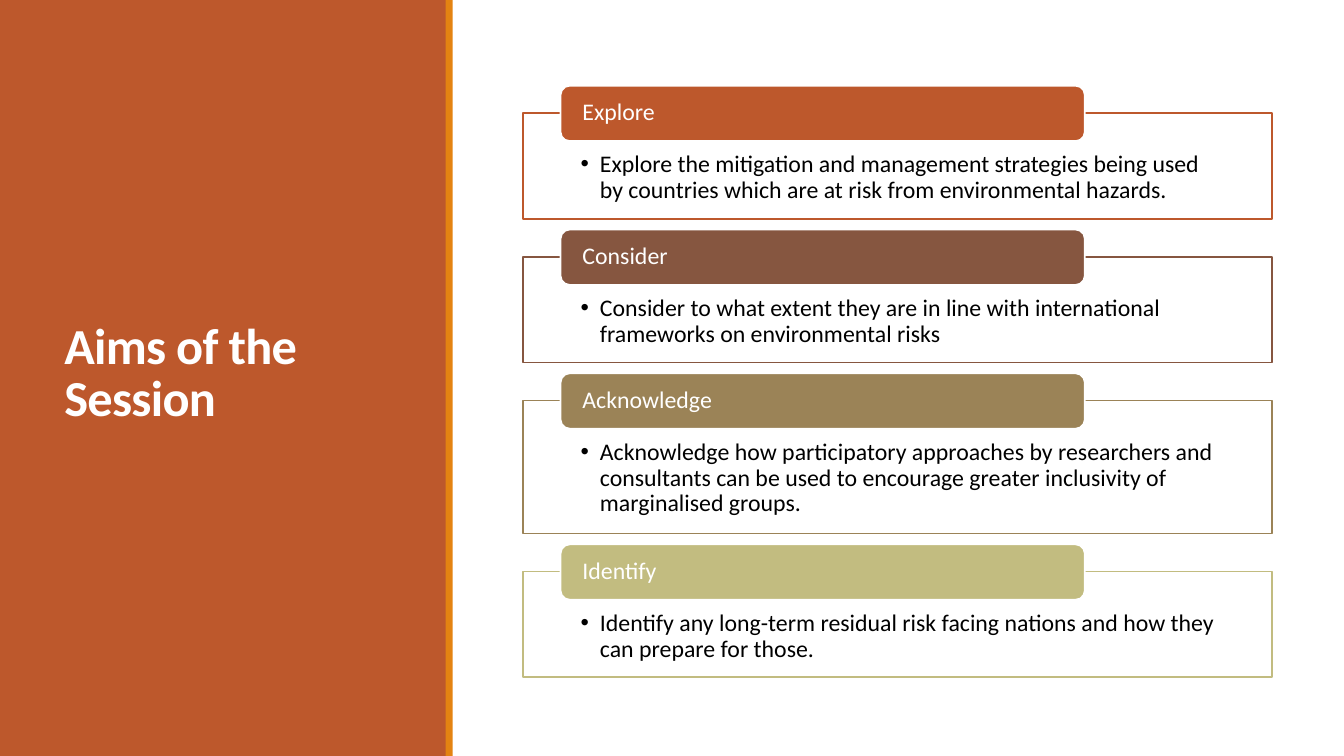
from dataclasses import dataclass

from lxml import etree
from pptx import Presentation
from pptx import util as u
from pptx.dml.color import RGBColor
from pptx.enum import shapes, text
from pptx.oxml import ns

WHITE = RGBColor(0xFF, 0xFF, 0xFF)
BLACK = RGBColor(0x00, 0x00, 0x00)
RUST = RGBColor(0xBD, 0x58, 0x2C)
ORANGE = RGBColor(0xE4, 0x83, 0x12)
BROWN = RGBColor(0x86, 0x56, 0x40)
KHAKI = RGBColor(0x9B, 0x83, 0x57)
SAGE = RGBColor(0xC2, 0xBC, 0x80)

SLIDE_WIDTH, SLIDE_HEIGHT = 13.33, 7.5
FIRST_TOP, LAST_TOP = 1.12, 5.67
TAB_RISE = 0.27
TAB_HEIGHT = 0.55
HANGING = 0.19


@dataclass
class Aim:
    heading: str
    detail: str
    color: RGBColor
    height: float = 1.05


AIMS = [
    Aim("Explore", "Explore the mitigation and management strategies being used by "
        "countries which are at risk from environmental hazards.", RUST),
    Aim("Consider", "Consider to what extent they are in line with international "
        "frameworks on environmental risks", BROWN),
    Aim("Acknowledge", "Acknowledge how participatory approaches by researchers and "
        "consultants can be used to encourage greater inclusivity of "
        "marginalised groups.", KHAKI, 1.32),
    Aim("Identify", "Identify any long-term residual risk facing nations and how "
        "they can prepare for those.", SAGE),
]


def add_block(page, kind, left: float, top: float, width: float, height: float,
              fill: RGBColor, line: RGBColor | None = None):
    """Add a flat shape, outlined only when a line colour is given."""
    block = page.shapes.add_shape(kind, *map(u.Inches, (left, top, width, height)))
    block.shadow.inherit = False
    block.fill.solid()
    block.fill.fore_color.rgb = fill
    if line is None:
        block.line.fill.background()
    else:
        block.line.color.rgb = line
        block.line.width = u.Pt(1.25)
    return block


def write(box, words: str, color: RGBColor, margins: tuple, anchor,
          size: float = 17, bold: bool = False, spacing: float = 0.9):
    """Fill a box with one left-aligned paragraph; return it with its run."""
    frame = box.text_frame
    left, top, right, bottom = map(u.Inches, margins)
    frame_format = {"word_wrap": True, "vertical_anchor": anchor,
                    "margin_left": left, "margin_top": top,
                    "margin_right": right, "margin_bottom": bottom}
    para = frame.paragraphs[0]
    span = para.add_run()
    span.text = words
    para_format = {"alignment": text.PP_ALIGN.LEFT, "line_spacing": spacing}
    font_format = {"name": "Calibri", "size": u.Pt(size), "bold": bold}
    for target, values in ((frame, frame_format), (para, para_format),
                           (span.font, font_format)):
        for name, value in values.items():
            setattr(target, name, value)
    span.font.color.rgb = color
    return para, span


def add_bullet(para) -> None:
    properties = para._p.get_or_add_pPr()
    properties.set("marL", str(u.Inches(HANGING)))
    properties.set("indent", str(-u.Inches(HANGING)))
    etree.SubElement(properties, ns.qn("a:buFont")).set("typeface", "Arial")
    etree.SubElement(properties, ns.qn("a:buChar")).set("char", "•")


def add_aim(page, aim: Aim, top: float) -> None:
    """Draw an outlined frame with its coloured heading tab."""
    frame = add_block(page, shapes.MSO_SHAPE.RECTANGLE, 5.19, top, 7.43, aim.height,
                      WHITE, aim.color)
    fill_color = frame._element.spPr.find(ns.qn("a:solidFill"))[0]
    etree.SubElement(fill_color, ns.qn("a:alpha")).set("val", "90000")
    para, _ = write(frame, aim.detail, BLACK, (0.57, 0.39, 0.57, 0.13),
                    text.MSO_ANCHOR.TOP)
    add_bullet(para)

    tab = add_block(page, shapes.MSO_SHAPE.ROUNDED_RECTANGLE, 5.56, top - TAB_RISE,
                    5.2, TAB_HEIGHT, aim.color, WHITE)
    write(tab, aim.heading, WHITE, (0.19, 0, 0.19, 0.01), text.MSO_ANCHOR.MIDDLE)


def main() -> None:
    deck = Presentation()
    deck.slide_width = u.Inches(SLIDE_WIDTH)
    deck.slide_height = u.Inches(SLIDE_HEIGHT)
    page = deck.slides.add_slide(deck.slide_layouts[6])
    page.background.fill.solid()
    page.background.fill.fore_color.rgb = WHITE

    # Side panel with title and accent strip
    rectangle = shapes.MSO_SHAPE.RECTANGLE
    add_block(page, rectangle, 0, 0, 4.43, SLIDE_HEIGHT, RUST)
    title = page.shapes.add_textbox(*map(u.Inches, (0.54, 0.57, 3.37, 6.31)))
    _, span = write(title, "Aims of the Session", WHITE, (0.1, 0.05, 0.1, 0.06),
                    text.MSO_ANCHOR.MIDDLE, size=36, bold=True, spacing=0.85)
    span._r.get_or_add_rPr().set("spc", "-50")
    add_block(page, rectangle, 4.42, 0, 0.07, SLIDE_HEIGHT, ORANGE)

    # Stack of aims, evenly spaced between the first and last frame
    stacked = sum(aim.height for aim in AIMS[:-1])
    gap = (LAST_TOP - FIRST_TOP - stacked) / (len(AIMS) - 1)
    top = FIRST_TOP
    for aim in AIMS:
        add_aim(page, aim, top)
        top += aim.height + gap

    deck.save("out.pptx")


if __name__ == "__main__":
    main()
